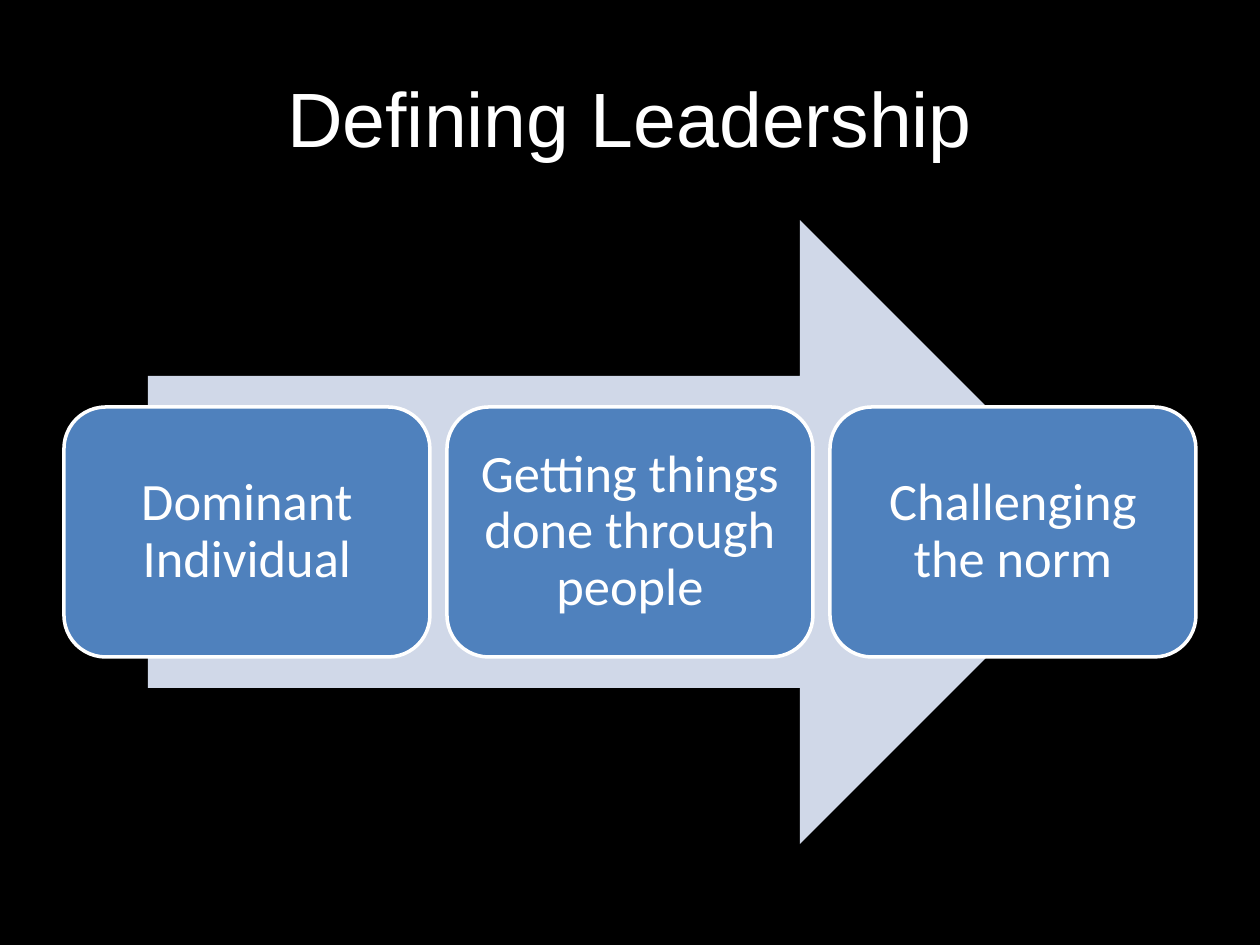
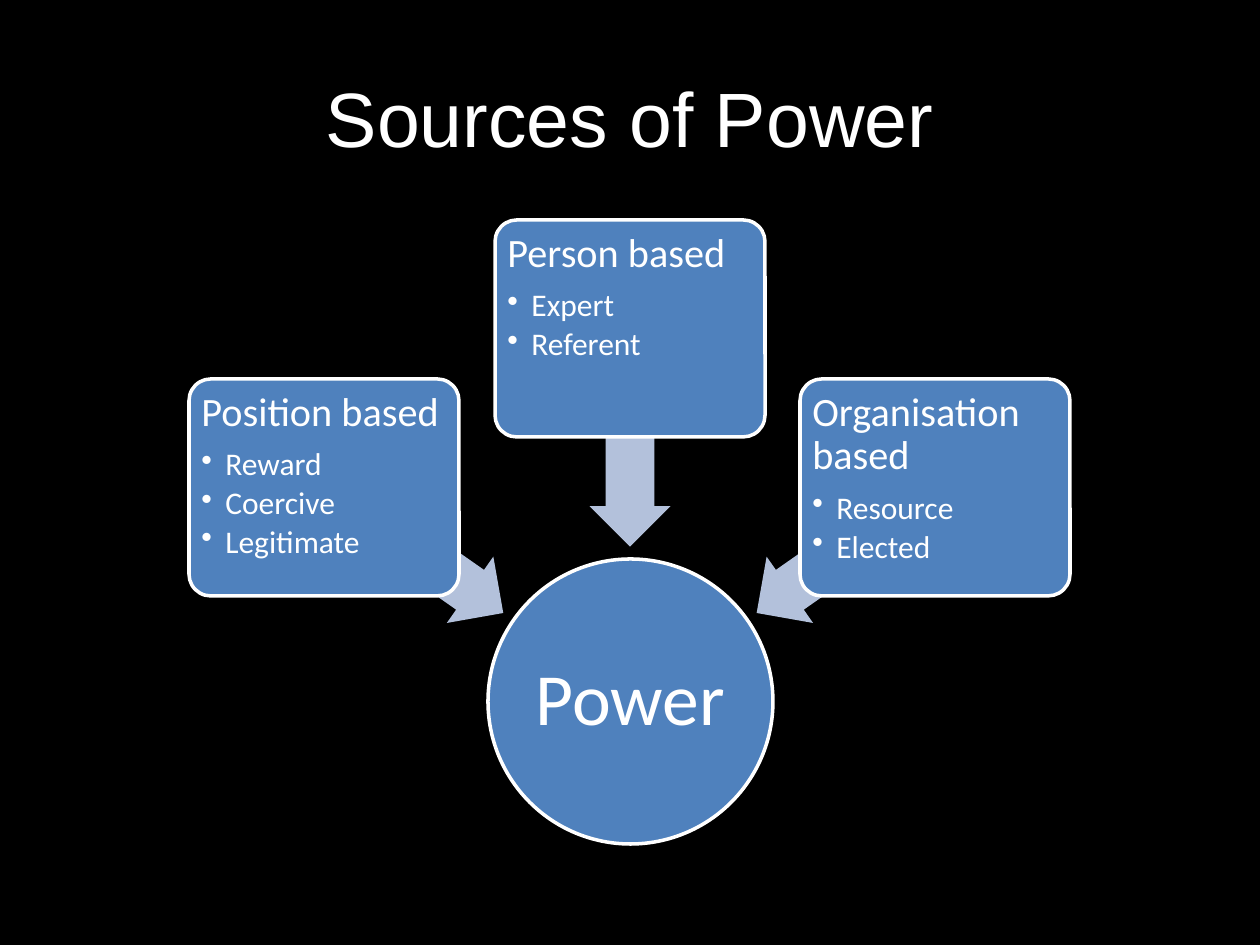
"""Builds two slides on leadership and the sources of power."""
from lxml import etree
from pptx import Presentation
from pptx import util as u
from pptx.dml import color
from pptx.enum import shapes, text
from pptx.oxml import ns

SCALE = u.Inches(1) / 126
COLORS = {"back": "000000", "text": "FFFFFF", "panel": "4F81BD",
          "band": "D0D8E8", "arrow": "B3C1DB"}
KIND = shapes.MSO_SHAPE
CENTER, LEFT = text.PP_ALIGN.CENTER, text.PP_ALIGN.LEFT
MIDDLE, TOP = text.MSO_ANCHOR.MIDDLE, text.MSO_ANCHOR.TOP


def add_box(page, kind, area, fill, outlined=True):
    box = page.shapes.add_shape(kind, *(round(px * SCALE) for px in area))
    box.shadow.inherit = False
    box.fill.solid()
    box.fill.fore_color.rgb = color.RGBColor.from_string(COLORS[fill])
    if outlined:
        box.line.color.rgb = color.RGBColor.from_string(COLORS["text"])
        box.line.width = u.Pt(2)
    else:
        box.line.fill.background()
    return box


def write(box, lines, sizes, font, align, anchor, inset, spacing=0.9):
    frame = box.text_frame
    frame.text = "\n".join(lines)
    frame.word_wrap = True
    frame.vertical_anchor = anchor
    frame.margin_left = frame.margin_right = round(inset * SCALE)
    frame.margin_top = frame.margin_bottom = round(inset * SCALE)
    for index, para in enumerate(frame.paragraphs):
        para.alignment = align
        para.line_spacing = spacing
        if index:
            para.level = 1
            para.space_after = u.Pt(2.7)
            props = para._p.get_or_add_pPr()
            props.set("marL", str(round(24 * SCALE)))
            props.set("indent", str(round(-24 * SCALE)))
            etree.SubElement(props, ns.qn("a:buChar"), char="•")
        elif len(lines) > 1:
            para.space_after = u.Pt(8)
        for span in para.runs:
            span.font.size = u.Pt(sizes[min(index, 1)])
            span.font.name = font
            span.font.color.rgb = color.RGBColor.from_string(COLORS["text"])


deck = Presentation()
deck.slide_width, deck.slide_height = round(1260 * SCALE), round(945 * SCALE)
backdrop = deck.slide_master.background.fill
backdrop.solid()
backdrop.fore_color.rgb = color.RGBColor.from_string(COLORS["back"])

pages = []
for heading in ["Defining Leadership", "Sources of Power"]:
    page = deck.slides.add_slide(deck.slide_layouts[5])
    title = page.shapes.title
    title.left, title.top, title.width, title.height = (
        round(px * SCALE) for px in (63, 38, 1134, 158))
    write(title, [heading], [44], "Arial", CENTER, MIDDLE, 6, 1.0)
    pages.append(page)
leadership, power = pages

add_box(leadership, KIND.RIGHT_ARROW, (148, 220, 964, 624), "band", False)
definitions = ["Dominant Individual", "Getting things done through people",
               "Challenging the norm"]
for column, definition in enumerate(definitions):
    area = (64 + 383 * column, 407, 366, 250)
    box = add_box(leadership, KIND.ROUNDED_RECTANGLE, area, "panel")
    write(box, [definition], [30], "Calibri", CENTER, MIDDLE, 15)

hub = add_box(power, KIND.OVAL, (488, 559, 285, 285), "panel")
write(hub, ["Power"], [42], "Calibri", CENTER, MIDDLE, 4)

sources = [
    ((189, 379), (305, 510), 215,
     ["Position based", "Reward", "Coercive", "Legitimate"]),
    ((495, 220), (521, 397), 270,
     ["Person based", "Expert", "Referent"]),
    ((800, 379), (737, 510), 325,
     ["Organisation based", "Resource", "Elected"]),
]
for corner, arrow_corner, angle, lines in sources:
    arrow = add_box(power, KIND.LEFT_ARROW, (*arrow_corner, 218, 81), "arrow", False)
    arrow.adjustments[0], arrow.adjustments[1] = 0.6, 0.5
    arrow.rotation = angle
    box = add_box(power, KIND.ROUNDED_RECTANGLE, (*corner, 270, 217), "panel")
    box.adjustments[0] = 0.1
    write(box, lines, [23, 18], "Calibri", LEFT, TOP, 6)

deck.save("out.pptx")
